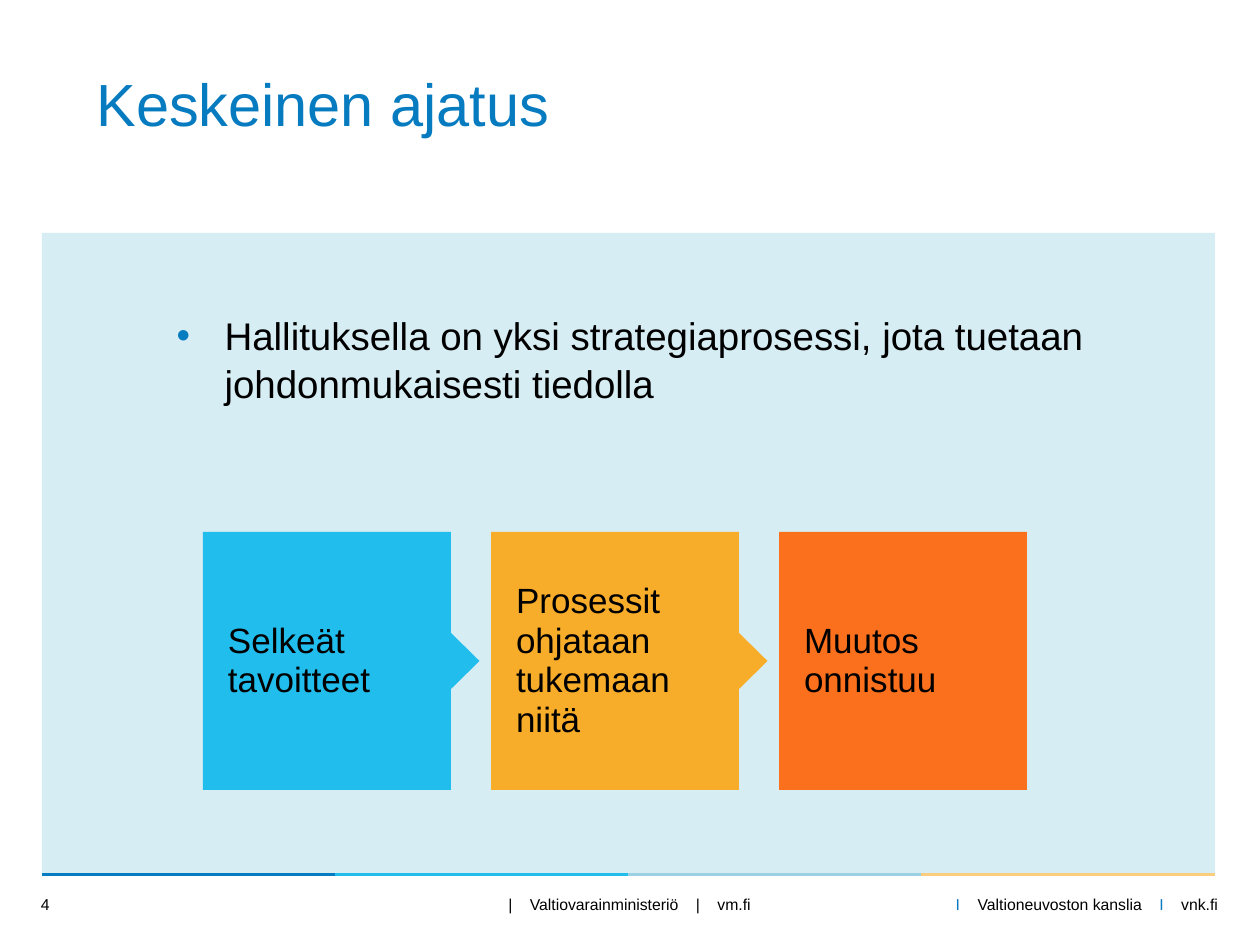
import pptx
import pptx.dml.color
import pptx.enum.shapes
import pptx.enum.text
import pptx.oxml.ns
import pptx.util
from lxml import etree

PX = 914400 / 126
SHAPES = pptx.enum.shapes.MSO_SHAPE
ALIGN = pptx.enum.text.PP_ALIGN
ANCHOR = pptx.enum.text.MSO_ANCHOR
BLUE = "077BC0"
BLACK = "000000"


def color(value):
    return pptx.dml.color.RGBColor.from_string(value)


def add_span(para, text, size, ink, spacing=0):
    span = para.add_run()
    span.text = text
    span.font.name = "Arial"
    span.font.size = pptx.util.Pt(size)
    span.font.color.rgb = color(ink)
    if spacing:
        span.font._element.set("spc", str(spacing))


deck = pptx.Presentation()
deck.slide_width = round(1260 * PX)
deck.slide_height = round(945 * PX)
page = deck.slides.add_slide(deck.slide_layouts[1])
title, body = page.placeholders

for index, ink in enumerate([BLUE, "21BDED", "9AD0E1", "FACD7F"]):
    left = 42 + 293 * index
    ends = [round(length * PX) for length in (left, 874, left + 294, 874)]
    line = page.shapes.add_connector(pptx.enum.shapes.MSO_CONNECTOR.STRAIGHT, *ends)
    line.line.color.rgb = color(ink)
    line.line.width = pptx.util.Pt(2)
    etree.SubElement(line._element.spPr, pptx.oxml.ns.qn("a:effectLst"))

steps = [
    ("Selkeät tavoitteet", "21BDED"),
    ("Prosessit ohjataan tukemaan niitä", "F7AD29"),
    ("Muutos onnistuu", "FB701D"),
]
blocks = [(SHAPES.RECTANGLE, 42, 233, 1173, 640, "D7EDF4", "")]
for index, (text, ink) in enumerate(steps):
    left = 203 + 288 * index
    blocks.append((SHAPES.RECTANGLE, left, 532, 248, 258, ink, text))
    if index < len(steps) - 1:
        blocks.append((SHAPES.ISOSCELES_TRIANGLE, left + 232, 646, 59, 30, ink, ""))

for kind, left, top, width, height, ink, text in blocks:
    frame = [round(length * PX) for length in (left, top, width, height)]
    block = page.shapes.add_shape(kind, *frame)
    block.shadow.inherit = False
    block.fill.solid()
    block.fill.fore_color.rgb = color(ink)
    block.line.fill.background()
    if kind == SHAPES.ISOSCELES_TRIANGLE:
        block.rotation = 90
    if text:
        box = block.text_frame
        box.word_wrap = True
        box.vertical_anchor = ANCHOR.MIDDLE
        box.margin_left = box.margin_right = round(25 * PX)
        box.margin_top = box.margin_bottom = round(10 * PX)
        para = box.paragraphs[0]
        para.alignment = ALIGN.LEFT
        para.line_spacing = 0.95
        add_span(para, text, 20, BLACK)

placeholders = [
    (title, (84, 18, 1113, 127), ANCHOR.BOTTOM, "Keskeinen ajatus", 34, BLUE),
    (body, (164, 304, 992, 144), ANCHOR.TOP,
     "Hallituksella on yksi strategiaprosessi, jota tuetaan johdonmukaisesti tiedolla", 22, BLACK),
]
for holder, frame, anchor, text, size, ink in placeholders:
    page.shapes._spTree.append(holder._element)
    holder.left, holder.top, holder.width, holder.height = [round(length * PX) for length in frame]
    holder.text_frame.auto_size = pptx.enum.text.MSO_AUTO_SIZE.NONE
    holder.text_frame.vertical_anchor = anchor
    para = holder.text_frame.paragraphs[0]
    para.alignment = ALIGN.LEFT
    add_span(para, text, size, ink)

para = body.text_frame.paragraphs[0]
para.space_before = pptx.util.Pt(14)
para.line_spacing = 1.04
settings = para._p.get_or_add_pPr()
settings.set("marL", str(round(48 * PX)))
settings.set("indent", str(round(-48 * PX)))
bullet_color = etree.SubElement(settings, pptx.oxml.ns.qn("a:buClr"))
etree.SubElement(bullet_color, pptx.oxml.ns.qn("a:srgbClr"), val=BLUE)
etree.SubElement(settings, pptx.oxml.ns.qn("a:buFont"), typeface="Arial")
etree.SubElement(settings, pptx.oxml.ns.qn("a:buChar"), char="•")

footers = [
    (41, 53, ALIGN.LEFT, [("4", BLACK)]),
    (441, 377, ALIGN.CENTER,
     [("|", BLACK), ("Valtiovarainministeriö", BLACK), ("|", BLACK), ("vm.fi", BLACK)]),
    (938, 280, ALIGN.RIGHT,
     [("I", BLUE), ("Valtioneuvoston kanslia", BLACK), ("I", BLUE), ("vnk.fi", BLACK)]),
]
for left, width, alignment, parts in footers:
    frame = [round(length * PX) for length in (left, 886, width, 37)]
    box = page.shapes.add_textbox(*frame).text_frame
    box.word_wrap = True
    box.vertical_anchor = ANCHOR.MIDDLE
    box.margin_left = box.margin_right = box.margin_top = box.margin_bottom = 0
    para = box.paragraphs[0]
    para.alignment = alignment
    for index, (text, ink) in enumerate(parts):
        if index:
            add_span(para, " ", 9, ink, 750)
        add_span(para, text, 9, ink)

deck.save("out.pptx")
